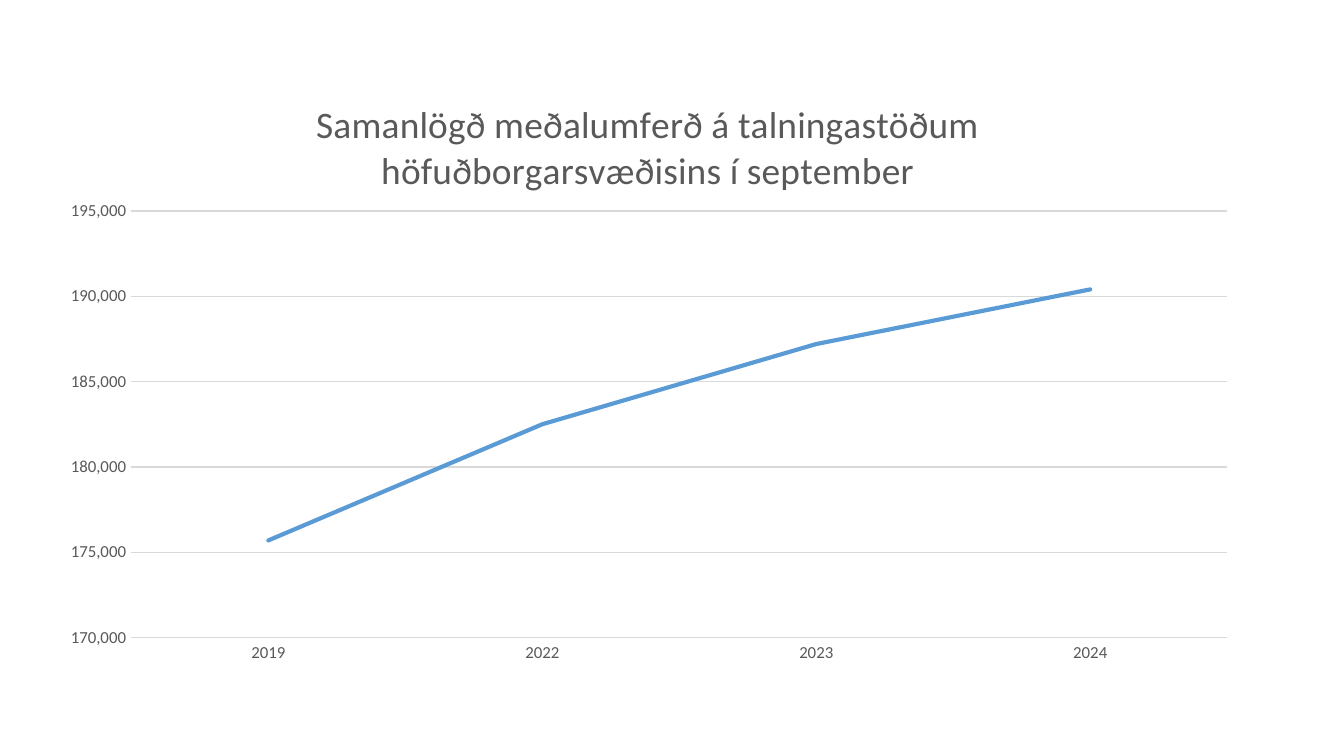
import pptx
import pptx.chart.data
import pptx.dml.color
import pptx.enum.chart
import pptx.enum.text
import pptx.oxml
import pptx.oxml.ns
import pptx.util
from pptx.util import Cm

FONT = "Calibri"
TEXT_GREY = pptx.dml.color.RGBColor(0x59, 0x59, 0x59)
GRID_GREY = pptx.dml.color.RGBColor(0xD9, 0xD9, 0xD9)
TRAFFIC_BLUE = pptx.dml.color.RGBColor(0x5B, 0x9B, 0xD5)

TITLE_LINES = (
    "Samanlögð meðalumferð á talningastöðum",
    "höfuðborgarsvæðisins í september",
)
TRAFFIC = {"2019": 175700, "2022": 182500, "2023": 187200, "2024": 190400}


def style_font(font, size):
    font.name = FONT
    font.size = pptx.util.Pt(size)
    font.bold = False
    font.color.rgb = TEXT_GREY


def style_line(line, color, width):
    line.color.rgb = color
    line.width = pptx.util.Pt(width)


def make_layout(**settings):
    """Return a manual chart layout, in fractions of the chart area."""
    entries = "".join(f'<c:{key} val="{val}"/>' for key, val in settings.items())
    return pptx.oxml.parse_xml(
        f'<c:layout {pptx.oxml.ns.nsdecls("c")}>'
        f"<c:manualLayout>{entries}</c:manualLayout></c:layout>"
    )


def replace_layout(parent, layout, position):
    for old in parent.findall(pptx.oxml.ns.qn("c:layout")):
        parent.remove(old)
    parent.insert(position, layout)


def add_traffic_chart(slide):
    data = pptx.chart.data.CategoryChartData(number_format="#,##0")
    data.categories = list(TRAFFIC)
    data.add_series("Series 1", list(TRAFFIC.values()))
    chart = slide.shapes.add_chart(
        pptx.enum.chart.XL_CHART_TYPE.LINE_STACKED,
        Cm(0.89), Cm(1.22), Cm(22.76), Cm(11.53), data,
    ).chart
    chart.has_legend = False
    chart.font.name = FONT
    chart.font.size = pptx.util.Pt(10)

    plot = chart.plots[0]
    plot.vary_by_categories = False
    traffic = plot.series[0]
    traffic.smooth = False
    traffic.marker.style = pptx.enum.chart.XL_MARKER_STYLE.NONE
    style_line(traffic.format.line, TRAFFIC_BLUE, 2.25)
    traffic.format.line._ln.set("cap", "rnd")
    plot_area = chart._chartSpace.chart.plotArea
    replace_layout(plot_area, make_layout(
        layoutTarget="inner", xMode="edge", yMode="edge",
        x=0.07, y=0.24, w=0.91, h=0.7), 0)
    return chart


def add_title(chart):
    frame = chart.chart_title.text_frame
    for number, text in enumerate(TITLE_LINES):
        line = frame.paragraphs[0] if number == 0 else frame.add_paragraph()
        line.text = text
        line.alignment = pptx.enum.text.PP_ALIGN.CENTER
        style_font(line.font, 20)
    chart.chart_title.include_in_layout = False
    # The layout follows the title text
    replace_layout(chart.chart_title._element, make_layout(
        xMode="edge", yMode="edge", x=0.22, y=0.05), 1)


def style_axes(chart):
    years, counts = chart.category_axis, chart.value_axis
    for axis in (years, counts):
        axis.major_tick_mark = pptx.enum.chart.XL_TICK_MARK.NONE
        axis.minor_tick_mark = pptx.enum.chart.XL_TICK_MARK.NONE
        style_font(axis.tick_labels.font, 9)
    style_line(years.format.line, GRID_GREY, 0.75)

    counts.minimum_scale = 170000
    counts.maximum_scale = 195000
    counts.major_unit = 5000
    counts.format.line.fill.background()
    counts.has_major_gridlines = True
    style_line(counts.major_gridlines.format.line, GRID_GREY, 0.75)
    counts.tick_labels.number_format = "#,##0"
    counts.tick_labels.number_format_is_linked = False


def main():
    deck = pptx.Presentation()
    deck.slide_width, deck.slide_height = Cm(25.4), Cm(14.29)
    slide = deck.slides.add_slide(deck.slide_layouts[6])

    # Average traffic by year
    chart = add_traffic_chart(slide)
    add_title(chart)
    style_axes(chart)

    deck.save("out.pptx")


if __name__ == "__main__":
    main()
